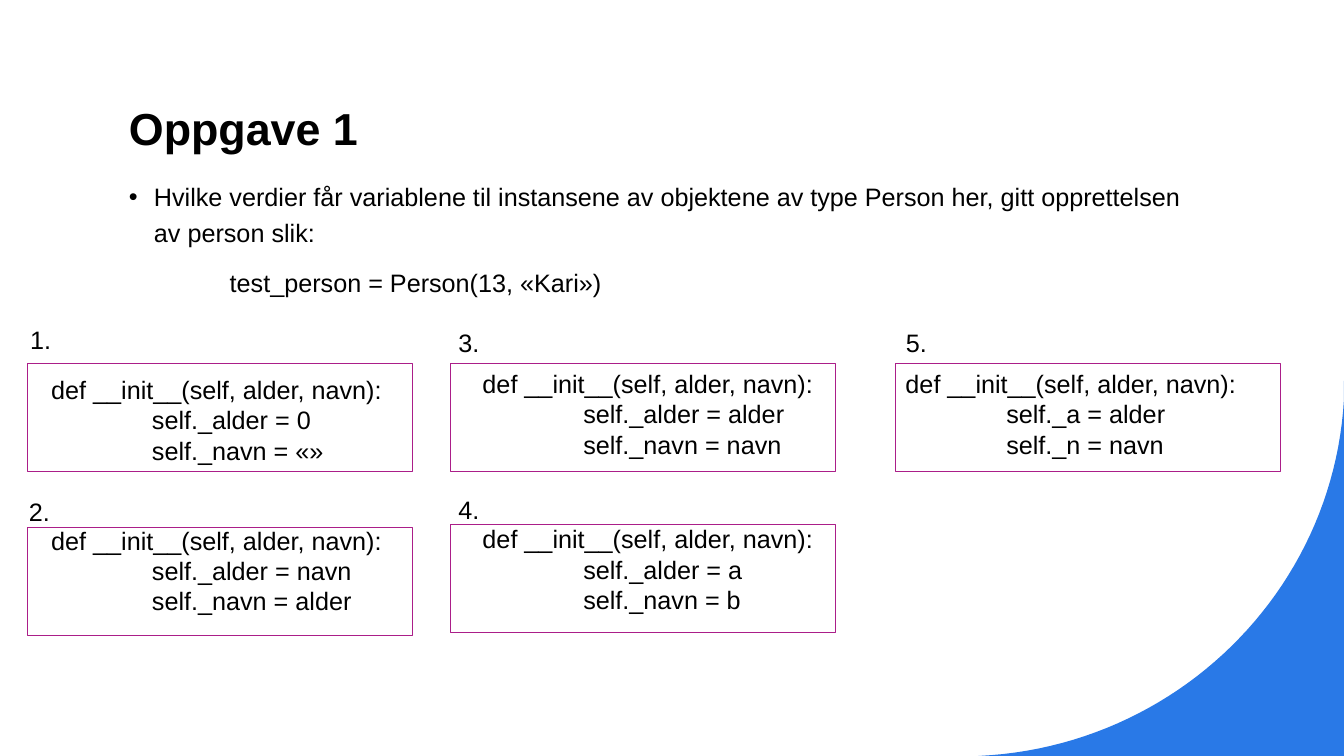
from lxml.etree import SubElement
from pptx import Presentation
from pptx.dml.color import RGBColor
from pptx.enum.shapes import MSO_SHAPE
from pptx.enum.text import MSO_ANCHOR
from pptx.oxml.ns import qn
from pptx.util import Cm, Pt

BLACK, BLUE, PURPLE = "000000", "2979E7", "AB1E89"
WIDTH, HEIGHT = 33.87, 19.05


def color(hex_string):
    return RGBColor.from_string(hex_string)


def add_text(slide, box, lines, size=18, bold=False, anchor=MSO_ANCHOR.TOP, **spacing):
    shape = slide.shapes.add_textbox(*[Cm(length) for length in box])
    frame = shape.text_frame
    frame.word_wrap = True
    frame.vertical_anchor = anchor
    frame.text = "\n".join(lines)
    font_format = {"name": "Arial", "size": Pt(size), "bold": bold}
    for paragraph in frame.paragraphs:
        # Tab stops every 2.54 cm
        paragraph._p.get_or_add_pPr().set("defTabSz", str(Cm(2.54)))
        for name, value in spacing.items():
            setattr(paragraph, name, value)
        font = paragraph.runs[0].font
        for name, value in font_format.items():
            setattr(font, name, value)
        font.color.rgb = color(BLACK)
    return shape


presentation = Presentation()
presentation.slide_width = Cm(WIDTH)
presentation.slide_height = Cm(HEIGHT)
slide = presentation.slides.add_slide(presentation.slide_layouts[6])

# Blue corner: a Bézier curve sampled from right edge to bottom edge
curve = [(WIDTH, 10.06), (33.6, 14.91), (29.64, 18.82), (24.66, HEIGHT)]
steps = 48
outline = []
for step in range(steps + 1):
    t = step / steps
    weights = ((1 - t) ** 3, 3 * t * (1 - t) ** 2, 3 * t ** 2 * (1 - t), t ** 3)
    outline.append([Cm(sum(w * point[axis] for w, point in zip(weights, curve)))
                    for axis in (0, 1)])
outline.append((Cm(WIDTH), Cm(HEIGHT)))
builder = slide.shapes.build_freeform(Cm(WIDTH), Cm(9.6), scale=1.0)
builder.add_line_segments(outline, close=True)
corner = builder.convert_to_shape()
corner.shadow.inherit = False
corner.fill.solid()
corner.fill.fore_color.rgb = color(BLUE)
corner.line.fill.background()

# Title and question
add_text(slide, (3, 2, 27.64, 2.03), ["Oppgave 1"], size=32, bold=True,
         anchor=MSO_ANCHOR.BOTTOM, line_spacing=1.1)
question = add_text(
    slide, (3, 4.29, 27.64, 3.86),
    ["Hvilke verdier får variablene til instansene av objektene av type Person her, "
     "gitt opprettelsen av person slik:",
     "\ttest_person = Person(13, «Kari»)"],
    line_spacing=1.2, space_before=Pt(10))
properties = question.text_frame.paragraphs[0]._p.get_or_add_pPr()
properties.set("marL", str(Cm(0.63)))
properties.set("indent", str(Cm(-0.63)))
SubElement(properties, qn("a:buFont"), typeface="Arial")
SubElement(properties, qn("a:buChar"), char="•")

# Alternatives: number position, frame position, code position, two assignments
alternatives = [
    ((0.51, 8.05), (0.69, 9.16), (1.04, 9.31), "self._alder = 0", "self._navn = «»"),
    ((0.48, 12.37), (0.69, 13.29), (1.04, 13.11), "self._alder = navn", "self._navn = alder"),
    ((11.3, 8.13), (11.35, 9.16), (11.91, 9.16), "self._alder = alder", "self._navn = navn"),
    ((11.3, 12.34), (11.35, 13.22), (11.91, 13.07), "self._alder = a", "self._navn = b"),
    ((22.58, 8.13), (22.57, 9.16), (22.57, 9.16), "self._a = alder", "self._n = navn"),
]
for number, (number_at, frame_at, code_at, first, second) in enumerate(alternatives, 1):
    add_text(slide, (*code_at, 10.67, 2.57),
             ["def __init__(self, alder, navn):", "\t" + first, "\t" + second])
    frame = slide.shapes.add_shape(
        MSO_SHAPE.RECTANGLE, *[Cm(length) for length in (*frame_at, 9.7, 2.72)])
    frame.shadow.inherit = False
    frame.fill.background()
    frame.line.color.rgb = color(PURPLE)
    frame.line.width = Pt(1)
    add_text(slide, (*number_at, 3.18, 1.02), [f"{number}."])

presentation.save("out.pptx")
